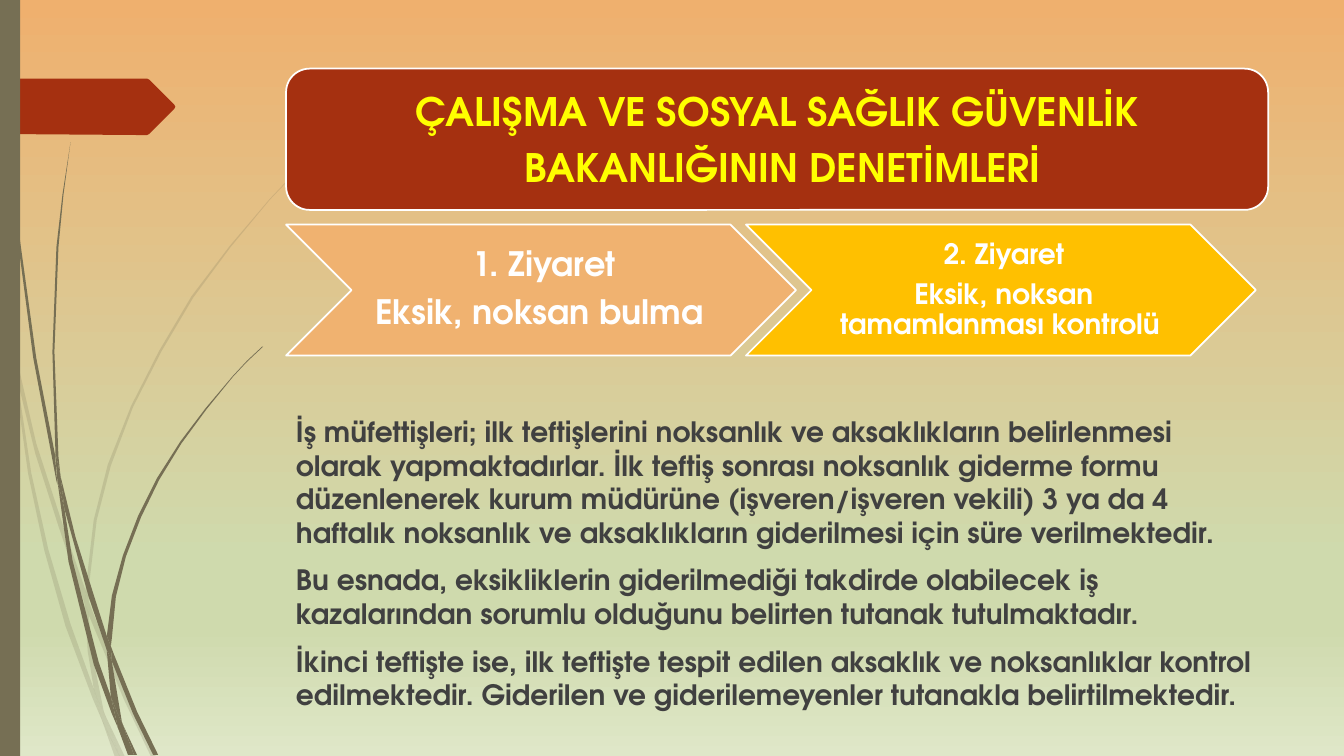
from lxml.etree import SubElement
from pptx import Presentation
from pptx.dml.color import RGBColor
from pptx.enum.shapes import MSO_SHAPE
from pptx.enum.text import MSO_ANCHOR, PP_ALIGN
from pptx.oxml.ns import qn
from pptx.util import Cm, Pt

OLIVE = RGBColor(0x76, 0x6F, 0x54)
RUST = RGBColor(0xA5, 0x30, 0x10)
PEACH = RGBColor(0xF0, 0xB2, 0x70)
AMBER = RGBColor(0xFF, 0xC0, 0x00)
YELLOW = RGBColor(0xFF, 0xFF, 0x00)
WHITE = RGBColor(0xFF, 0xFF, 0xFF)
CHARCOAL = RGBColor(0x40, 0x40, 0x40)
SKY = [
    (0, RGBColor(0xEF, 0xB0, 0x6E)),
    (74, RGBColor(0xCF, 0xDA, 0xAD)),
    (83, RGBColor(0xCF, 0xDA, 0xAD)),
    (100, RGBColor(0xDF, 0xE7, 0xC8)),
]
FONT = "TeX Gyre Adventor"
GRASS_UNIT = Cm(0.0254)


def paint(shape, color, outline=None):
    shape.shadow.inherit = False
    shape.fill.solid()
    shape.fill.fore_color.rgb = color
    if outline is None:
        shape.line.fill.background()
    else:
        shape.line.color.rgb = outline
        shape.line.width = Pt(1.25)


def write(frame, lines, size, color, paragraph_format):
    frame.word_wrap = True
    for index, line in enumerate(lines):
        para = frame.paragraphs[0] if index == 0 else frame.add_paragraph()
        for name, value in paragraph_format.items():
            setattr(para, name, value)
        span = para.add_run()
        span.text = line
        for name, value in {"name": FONT, "size": Pt(size), "bold": True}.items():
            setattr(span.font, name, value)
        span.font.color.rgb = color


deck = Presentation()
deck.slide_width = Cm(33.87)
deck.slide_height = Cm(19.05)
page = deck.slides.add_slide(deck.slide_layouts[6])

backdrop = page.background.fill
backdrop.gradient()
backdrop.gradient_angle = 270
stops = page.element.find(".//" + qn("a:gsLst"))
for stop in list(stops):
    stops.remove(stop)
for position, color in SKY:
    stop = SubElement(stops, qn("a:gs"), pos=str(position * 1000))
    SubElement(stop, qn("a:srgbClr"), val=str(color))

pale_grass = [
    [(11, 350), (9, 322), (0, 282), (0, 299), (10, 344)],
    [(58, 522), (84, 599), (85, 586), (62, 520), (36, 440), (14, 345), (17, 376), (35, 450)],
    [(92, 607), (88, 596), (88, 610), (123, 694), (150, 751), (155, 751), (127, 692)],
    [(119, 751), (124, 751), (105, 711)],
    [(93, 683), (70, 619), (48, 545), (31, 469), (17, 376), (11, 350), (28, 470), (44, 546),
     (65, 621), (92, 693), (101, 714), (99, 707)],
    [(84, 599), (87, 646), (93, 683), (96, 692), (105, 711), (103, 706), (91, 646), (88, 610),
     (88, 608)],
    [(88, 584), (96, 516), (110, 462), (132, 404), (160, 349), (192, 295), (229, 245),
     (268, 198), (290, 175), (312, 154), (312, 153), (289, 175), (268, 197), (228, 244),
     (190, 294), (158, 348), (130, 403), (107, 461), (93, 516), (85, 584), (85, 586), (88, 596)],
    [(101, 714), (114, 751), (119, 751)],
    [(88, 608), (88, 610), (88, 596), (85, 586), (84, 599)],
    [(96, 692), (93, 683), (99, 707), (101, 714), (119, 751), (105, 711)],
]
dark_grass = [
    [(7, 110), (17, 233), (33, 355), (56, 477), (57, 481), (55, 457), (55, 453), (36, 355),
     (19, 232), (8, 109), (5, 48), (4, 0), (3, 0), (4, 48)],
    [(88, 592), (106, 645), (106, 633), (106, 631), (93, 590), (75, 533), (60, 472), (64, 505)],
    [(113, 649), (110, 641), (111, 656), (132, 708), (152, 749), (157, 749), (136, 706)],
    [(110, 691), (98, 657), (72, 556), (64, 505), (57, 477), (68, 557), (93, 659), (111, 708),
     (117, 722), (116, 717)],
    [(60, 472), (58, 453), (54, 349), (58, 245), (63, 193), (70, 141), (62, 193), (56, 245),
     (52, 349), (55, 449)],
    [(133, 749), (136, 749), (122, 719)],
    [(57, 477), (64, 505), (60, 472), (55, 449), (55, 453)],
    [(111, 633), (115, 592), (125, 552), (140, 513), (158, 476), (180, 440), (205, 406),
     (231, 374), (245, 359), (261, 344), (260, 344), (245, 358), (231, 373), (204, 405),
     (179, 438), (156, 474), (137, 512), (122, 551), (111, 591), (106, 631), (110, 641)],
    [(117, 722), (127, 749), (131, 749)],
    [(106, 645), (110, 691), (116, 706), (122, 719), (121, 716), (111, 656), (109, 651)],
    [(106, 645), (109, 651), (111, 656), (110, 641), (106, 631), (106, 633)],
    [(116, 706), (110, 691), (116, 717), (117, 722), (130, 749), (133, 749), (122, 719)],
]
side_tab = [(0, 78), (146, 78), (148, 79), (173, 104), (174, 106), (173, 108), (148, 133),
            (146, 134), (136, 134), (0, 133)]

for color, opacity, outlines in [
    (OLIVE, 20, pale_grass), (OLIVE, 100, dark_grass), (RUST, 100, [side_tab]),
]:
    for points in outlines:
        builder = page.shapes.build_freeform(*points[0], scale=GRASS_UNIT)
        builder.add_line_segments(points[1:])
        piece = builder.convert_to_shape()
        paint(piece, color)
        if opacity < 100:
            tint = piece.element.spPr.find(qn("a:solidFill")).find(qn("a:srgbClr"))
            SubElement(tint, qn("a:alpha"), val=str(opacity * 1000))

side_bar = page.shapes.add_shape(MSO_SHAPE.RECTANGLE, 0, 0, Cm(0.51), Cm(19.05))
paint(side_bar, OLIVE)

panels = [
    (MSO_SHAPE.ROUNDED_RECTANGLE, 7.21, 1.73, 24.75, 3.56, RUST, YELLOW, 28, 0.1, 0.23,
     ["ÇALIŞMA VE SOSYAL SAĞLIK GÜVENLİK", " BAKANLIĞININ DENETİMLERİ"]),
    (MSO_SHAPE.CHEVRON, 7.21, 5.66, 12.85, 3.3, PEACH, WHITE, 24, 0.25, 0.1,
     ["1. Ziyaret", "Eksik, noksan bulma "]),
    (MSO_SHAPE.CHEVRON, 18.8, 5.66, 12.85, 3.3, AMBER, WHITE, 20, 0.25, 0.1,
     ["2. Ziyaret", "Eksik, noksan tamamlanması kontrolü "]),
]
for kind, left, top, width, height, color, ink, size, inset, drop, lines in panels:
    panel = page.shapes.add_shape(kind, Cm(left), Cm(top), Cm(width), Cm(height))
    paint(panel, color, WHITE)
    frame = panel.text_frame
    for name, value in {"margin_left": Cm(inset), "margin_right": Cm(0.1),
                        "margin_top": Cm(drop), "margin_bottom": Cm(0.1),
                        "vertical_anchor": MSO_ANCHOR.MIDDLE}.items():
        setattr(frame, name, value)
    write(frame, lines, size, ink, {"alignment": PP_ALIGN.CENTER, "line_spacing": 0.9,
                                    "space_after": Pt(size * 0.35)})

body = page.shapes.add_textbox(Cm(7.21), Cm(8.13), Cm(24.77), Cm(9.92))
body.text_frame.vertical_anchor = MSO_ANCHOR.BOTTOM
write(body.text_frame, [
    "İş müfettişleri; ilk teftişlerini noksanlık ve aksaklıkların belirlenmesi olarak "
    "yapmaktadırlar. İlk teftiş sonrası noksanlık giderme formu düzenlenerek kurum "
    "müdürüne (işveren/işveren vekili) 3 ya da 4 haftalık noksanlık ve aksaklıkların "
    "giderilmesi için süre verilmektedir.",
    "Bu esnada, eksikliklerin giderilmediği takdirde olabilecek iş kazalarından sorumlu "
    "olduğunu belirten tutanak tutulmaktadır.",
    "İkinci teftişte ise, ilk teftişte tespit edilen aksaklık ve noksanlıklar kontrol "
    "edilmektedir. Giderilen ve giderilemeyenler tutanakla belirtilmektedir.",
], 20, CHARCOAL, {"alignment": PP_ALIGN.LEFT, "space_before": Pt(10)})

deck.save("out.pptx")
